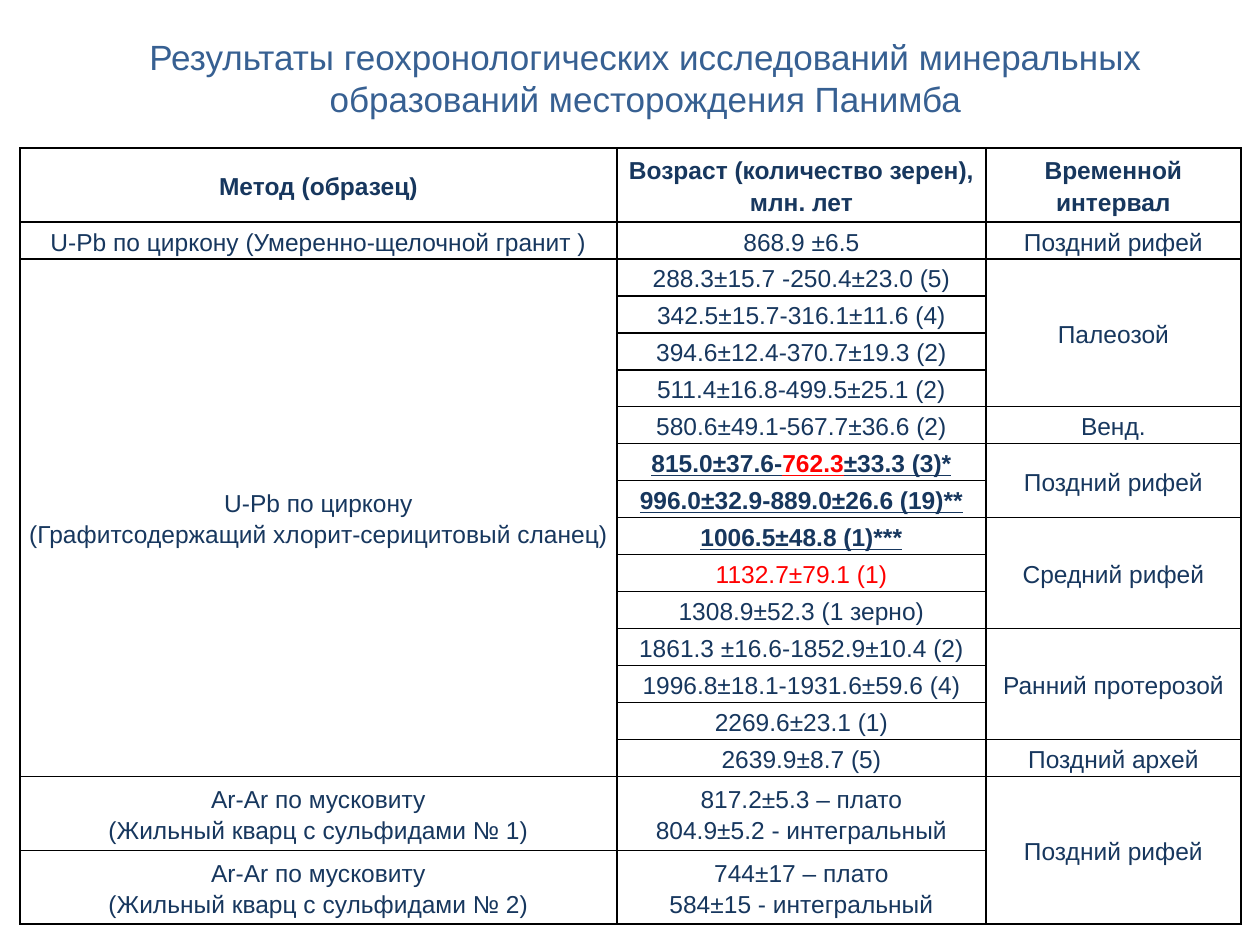
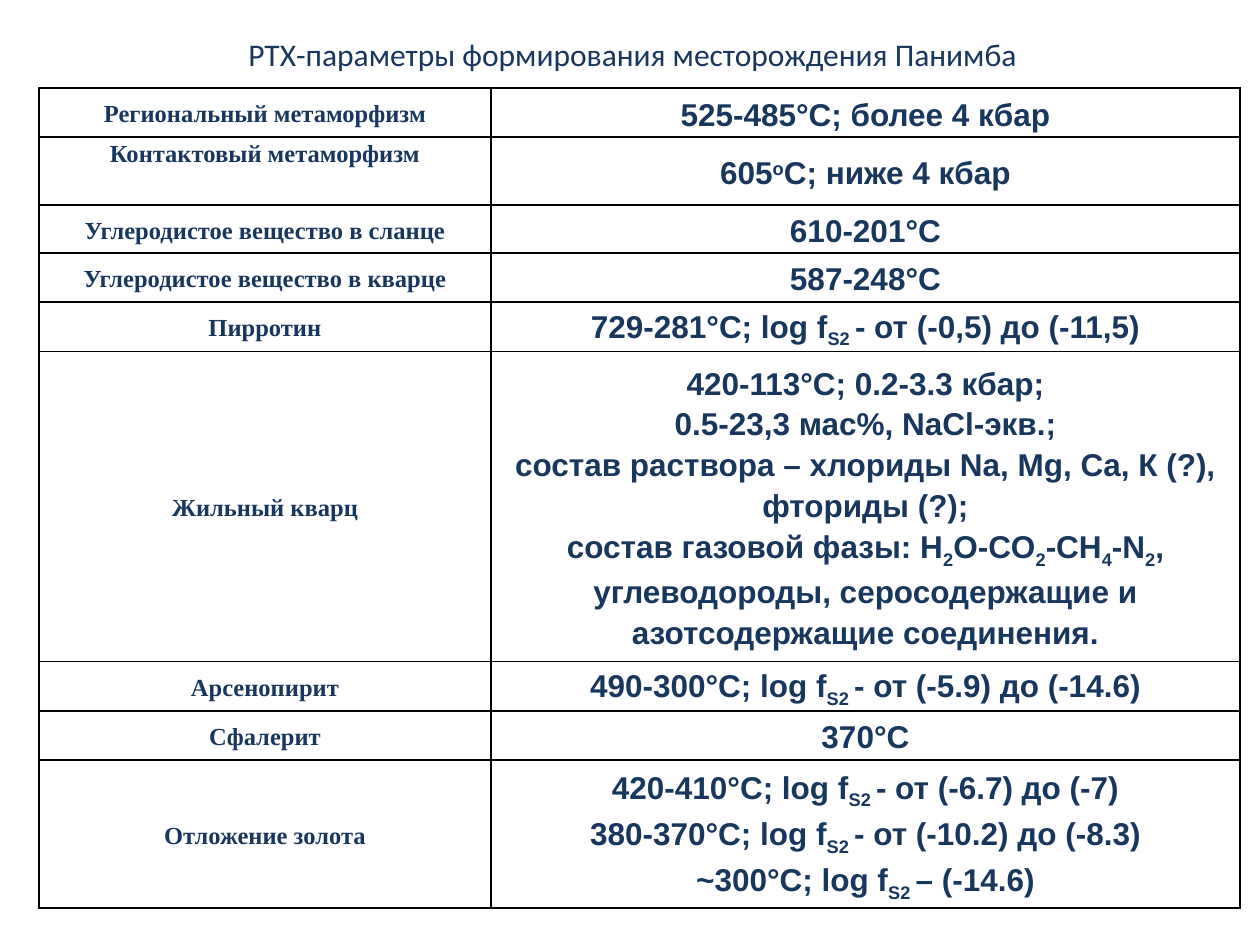
"""Build two table slides on the Panimba deposit."""
import lxml.etree
import pptx
import pptx.dml.color
import pptx.enum.text
import pptx.oxml.ns
import pptx.util

HUES = {"navy": "17375E", "blue": "376092", "red": "FF0000", "line": "000000"}
UNIT = 914400 / 126
BASE = {"_": "-25000", "^": "30000"}
MARKS = "+*!_^"
ALIGN = pptx.enum.text.PP_ALIGN
MID = pptx.enum.text.MSO_ANCHOR.MIDDLE
TOP = pptx.enum.text.MSO_ANCHOR.TOP


def put(frame, text, size=14, face="Arial", hue="navy", bold=False, align=ALIGN.CENTER, gap=None):
    """Write lines of runs; marks: + bold, * underline, ! red, _ sub, ^ super."""
    for num, line in enumerate(text.split("\n")):
        para = frame.paragraphs[0] if num == 0 else frame.add_paragraph()
        para.alignment = align
        if gap:
            para.line_spacing = gap
        for part in line.split("|"):
            words = part.lstrip(MARKS)
            marks = part[:len(part) - len(words)]
            run = para.add_run()
            run.text = words
            font = run.font
            font.size = pptx.util.Pt(size)
            font.name = face
            font.bold = bold or "+" in marks
            font.underline = "*" in marks
            tone = HUES["red" if "!" in marks else hue]
            font.color.rgb = pptx.dml.color.RGBColor.from_string(tone)
            for mark in marks:
                if mark in BASE:
                    run._r.get_or_add_rPr().set("baseline", BASE[mark])


def grid(slide, left, top, wides, highs, rows, looks, inset):
    """Draw a ruled table, where None extends the cell above it."""
    box = [round(n * UNIT) for n in (left, top, sum(wides), sum(highs))]
    table = slide.shapes.add_table(len(highs), len(wides), *box).table
    table.first_row = table.horz_banding = False
    for col, wide in zip(table.columns, wides):
        col.width = round(wide * UNIT)
    for row, high in zip(table.rows, highs):
        row.height = round(high * UNIT)
    for y, row in enumerate(rows):
        for x, text in enumerate(row):
            cell = table.cell(y, x)
            cell.margin_left = cell.margin_right = round(inset * UNIT)
            cell.margin_top = cell.margin_bottom = 0
            cell.vertical_anchor = MID
            props = cell._tc.get_or_add_tcPr()
            for side in ("a:lnL", "a:lnR", "a:lnT", "a:lnB"):
                edge = lxml.etree.SubElement(props, pptx.oxml.ns.qn(side), w="12700")
                fill = lxml.etree.SubElement(edge, pptx.oxml.ns.qn("a:solidFill"))
                lxml.etree.SubElement(fill, pptx.oxml.ns.qn("a:srgbClr"), val=HUES["line"])
            cell.fill.background()
            if text is None:
                continue
            put(cell.text_frame, text, gap=1.15, **looks[x])
            end = y
            while end + 1 < len(rows) and rows[end + 1][x] is None:
                end += 1
            if end > y:
                cell.merge(table.cell(end, x))
    return table


deck = pptx.Presentation()
deck.slide_width = round(1260 * UNIT)
deck.slide_height = round(945 * UNIT)
blank = deck.slide_layouts[6]

ages = [
    ("+Метод (образец)", "+Возраст (количество зерен),\n+млн. лет", "+Временной интервал"),
    ("U-Pb по циркону (Умеренно-щелочной гранит )", "868.9 ±6.5", "Поздний рифей"),
    ("U-Pb по циркону\n(Графитсодержащий хлорит-серицитовый сланец)",
     "288.3±15.7 -250.4±23.0 (5)", "Палеозой"),
    (None, "342.5±15.7-316.1±11.6 (4)", None),
    (None, "394.6±12.4-370.7±19.3 (2)", None),
    (None, "511.4±16.8-499.5±25.1 (2)", None),
    (None, "580.6±49.1-567.7±36.6 (2)", "Венд."),
    (None, "+*815.0±37.6-|+*!762.3|+*±33.3 (3)*", "Поздний рифей"),
    (None, "+*996.0±32.9-889.0±26.6 (19)**", None),
    (None, "+*1006.5±48.8 (1)***", "Средний рифей"),
    (None, "!1132.7±79.1 (1)", None),
    (None, "1308.9±52.3 (1 зерно)", None),
    (None, "1861.3 ±16.6-1852.9±10.4 (2)", "Ранний протерозой"),
    (None, "1996.8±18.1-1931.6±59.6 (4)", None),
    (None, "2269.6±23.1 (1)", None),
    (None, "2639.9±8.7 (5)", "Поздний архей"),
    ("Ar-Ar по мусковиту\n(Жильный кварц с сульфидами № 1)",
     "817.2±5.3 – плато\n804.9±5.2 ‑ интегральный", "Поздний рифей"),
    ("Ar-Ar по мусковиту\n(Жильный кварц с сульфидами № 2)",
     "744±17 – плато\n584±15 ‑ интегральный", None),
]
slide = deck.slides.add_slide(blank)
grid(slide, 20, 148, [597, 369, 255], [74] + [37] * 15 + [74] * 2, ages, [{}] * 3, 9)
box = slide.shapes.add_textbox(*[round(n * UNIT) for n in (137, 29, 1033, 97)])
box.text_frame.word_wrap = False
box.text_frame.vertical_anchor = MID
put(box.text_frame, "Результаты геохронологических исследований минеральных\n"
    "образований месторождения Панимба", size=20, hue="blue")
box.text_frame.paragraphs[0].alignment = ALIGN.LEFT

facts = [
    ("Региональный метаморфизм", "525‑485°С; более 4 кбар"),
    ("Контактовый метаморфизм", "605|^о|С; ниже 4 кбар"),
    ("Углеродистое вещество в сланце", "610‑201°С"),
    ("Углеродистое вещество в кварце", "587‑248°С"),
    ("Пирротин", "729‑281°С; log f|_S2 |‑ от (-0,5) до (-11,5)"),
    ("Жильный кварц", "420‑113°С; 0.2‑3.3 кбар;\n0.5‑23,3 мас%, NaCl-экв.;\n"
     "состав раствора – хлориды Na, Mg, Ca, К (?), фториды (?);\n"
     "состав газовой фазы: H|_2|O-CO|_2|-CH|_4|-N|_2|, углеводороды, "
     "серосодержащие и азотсодержащие соединения."),
    ("Арсенопирит", "490‑300°С; log f|_S2 |‑ от (-5.9) до (-14.6)"),
    ("Сфалерит", "370°С"),
    ("Отложение золота", "420‑410°С; log f|_S2 |‑ от (-6.7) до (-7)\n"
     "380‑370°С; log f|_S2 |‑ от (-10.2) до (-8.3)\n"
     "~300°С; log f|_S2 |– (-14.6)"),
]
looks = [{"face": "Times New Roman", "bold": True}, {"size": 18, "bold": True}]
slide = deck.slides.add_slide(blank)
highs = [49, 68, 48, 49, 49, 310, 49, 49, 148]
table = grid(slide, 39, 88, [452, 749], highs, facts, looks, 8)
table.cell(1, 0).vertical_anchor = TOP
box = slide.shapes.add_textbox(*[round(n * UNIT) for n in (236, 29, 798, 50)])
box.text_frame.word_wrap = True
put(box.text_frame, "РТХ-параметры формирования месторождения Панимба",
    size=18, face="Calibri", align=ALIGN.LEFT)

deck.save("out.pptx")
